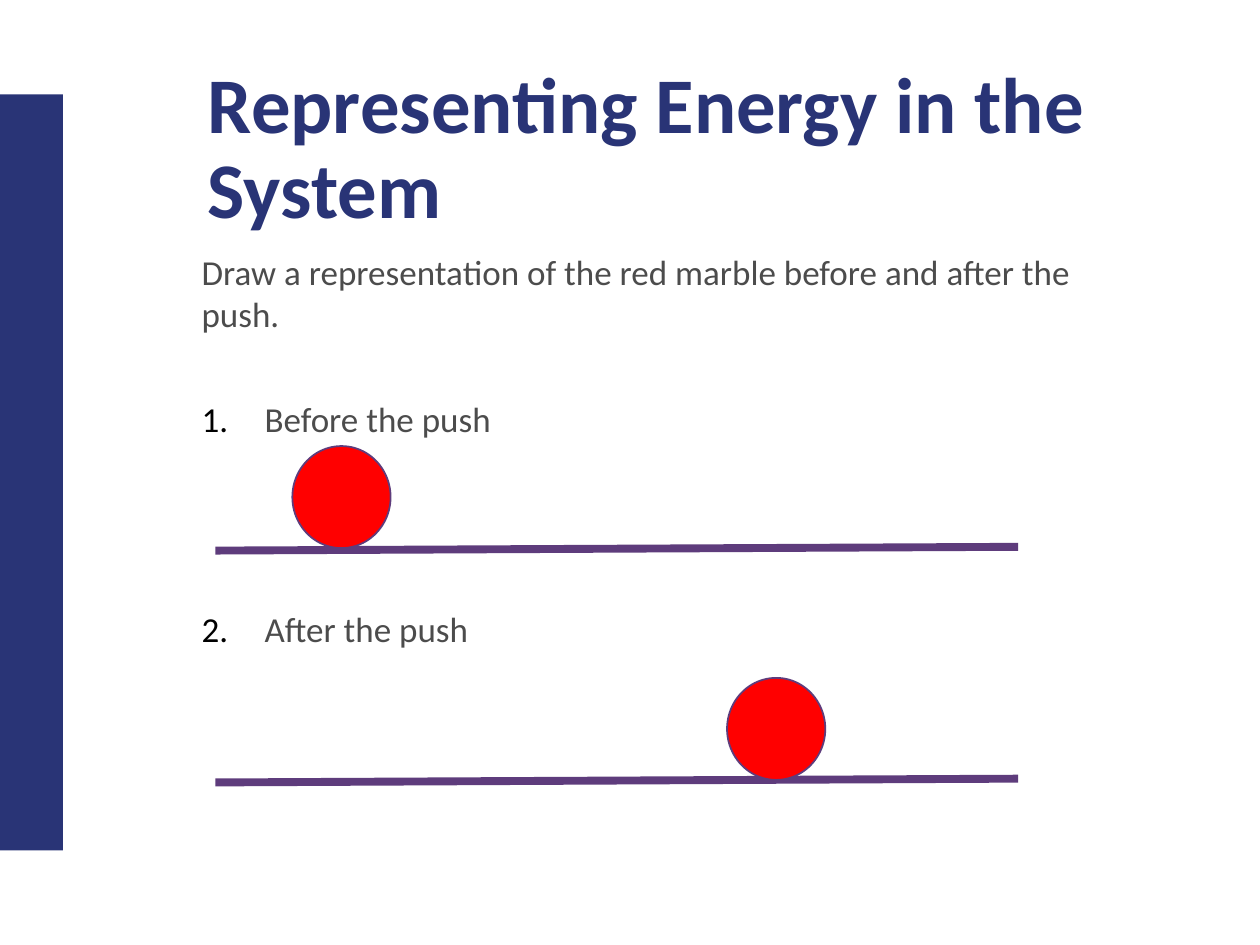
"""Build a slide that contrasts a marble before and after a push."""
from dataclasses import dataclass

from lxml import etree
from pptx import Presentation
from pptx import util as u
from pptx.dml.color import RGBColor
from pptx.enum import shapes, text
from pptx.oxml import ns

NAVY, PURPLE, RED, GREY, BLACK = "293476", "5E3C7C", "FF0000", "4C4C4C", "000000"
FONT = "Calibri"
TRACK_LEFT, TRACK_RIGHT, TRACK_RISE = 1.71, 8.08, 0.03
MARBLE_WIDTH, MARBLE_HEIGHT, MARBLE_LIFT = 0.78, 0.81, 0.83


@dataclass(frozen=True)
class Stage:
    label: str
    space_before: float
    track_top: float
    marble_left: float


STAGES = (
    Stage("Before the push", 36, 4.37, 2.32),
    Stage("After the push", 96, 6.21, 5.77),
)


def color(value: str) -> RGBColor:
    return RGBColor.from_string(value)


def place(shape, left: float, top: float, width: float, height: float) -> None:
    shape.left, shape.top = u.Inches(left), u.Inches(top)
    shape.width, shape.height = u.Inches(width), u.Inches(height)


def prepare_frame(shape, anchor):
    frame = shape.text_frame
    frame.word_wrap = True
    frame.auto_size = text.MSO_AUTO_SIZE.NONE
    frame.vertical_anchor = anchor
    return frame


def write(paragraph, content: str, *, size: float, fill: str, bold: bool = False,
          before: float = 0, spacing: float = 1.0, numbered: bool = False) -> None:
    paragraph.alignment = text.PP_ALIGN.LEFT
    paragraph.space_before = u.Pt(before)
    paragraph.line_spacing = spacing
    properties = paragraph._p.get_or_add_pPr()
    indent = u.Inches(0.5) if numbered else 0
    properties.set("marL", str(indent))
    properties.set("indent", str(-indent))
    if numbered:
        bullet_color = etree.SubElement(properties, ns.qn("a:buClr"))
        etree.SubElement(bullet_color, ns.qn("a:srgbClr"), val=BLACK)
        etree.SubElement(properties, ns.qn("a:buFont"), typeface=FONT)
        etree.SubElement(properties, ns.qn("a:buAutoNum"), type="arabicPeriod")
    else:
        etree.SubElement(properties, ns.qn("a:buNone"))
    run = paragraph.add_run()
    run.text = content
    run.font.name, run.font.size, run.font.bold = FONT, u.Pt(size), bold
    run.font.color.rgb = color(fill)


def add_filled(slide, kind, left: float, top: float, width: float, height: float,
               fill: str, outline: str | None = None) -> None:
    shape = slide.shapes.add_shape(kind, *map(u.Inches, (left, top, width, height)))
    shape.shadow.inherit = False
    shape.fill.solid()
    shape.fill.fore_color.rgb = color(fill)
    if outline:
        shape.line.color.rgb = color(outline)
        shape.line.width = u.Pt(1)
    else:
        shape.line.fill.background()


def add_track(slide, stage: Stage) -> None:
    ends = (TRACK_LEFT, stage.track_top, TRACK_RIGHT, stage.track_top - TRACK_RISE)
    track = slide.shapes.add_connector(
        shapes.MSO_CONNECTOR.STRAIGHT, *map(u.Inches, ends))
    track.line.color.rgb = color(PURPLE)
    track.line.width = u.Pt(4.5)
    etree.SubElement(track._element.spPr, ns.qn("a:effectLst"))


def add_marble(slide, stage: Stage) -> None:
    add_filled(slide, shapes.MSO_SHAPE.OVAL, stage.marble_left,
               stage.track_top - MARBLE_LIFT, MARBLE_WIDTH, MARBLE_HEIGHT, RED, PURPLE)


def main() -> None:
    presentation = Presentation()
    presentation.slide_width, presentation.slide_height = u.Inches(10), u.Inches(7.5)
    slide = presentation.slides.add_slide(presentation.slide_layouts[1])
    title, body = slide.placeholders

    place(title, 1.55, 0.14, 7.67, 2.11)
    heading = prepare_frame(title, text.MSO_ANCHOR.MIDDLE)
    write(heading.paragraphs[0], "Representing Energy in the System",
          size=45, fill=NAVY, bold=True, spacing=0.9)

    place(body, 1.5, 1.94, 7.67, 1)
    frame = prepare_frame(body, text.MSO_ANCHOR.TOP)
    write(frame.paragraphs[0],
          "Draw a representation of the red marble before and after the push.",
          size=20, fill=GREY)
    for stage in STAGES:
        write(frame.add_paragraph(), stage.label, size=20, fill=GREY,
              before=stage.space_before, numbered=True)

    add_filled(slide, shapes.MSO_SHAPE.RECTANGLE, 0, 0.75, 0.5, 6, NAVY)
    for draw in (add_track, add_marble):
        for stage in STAGES:
            draw(slide, stage)
    presentation.save("out.pptx")


if __name__ == "__main__":
    main()
